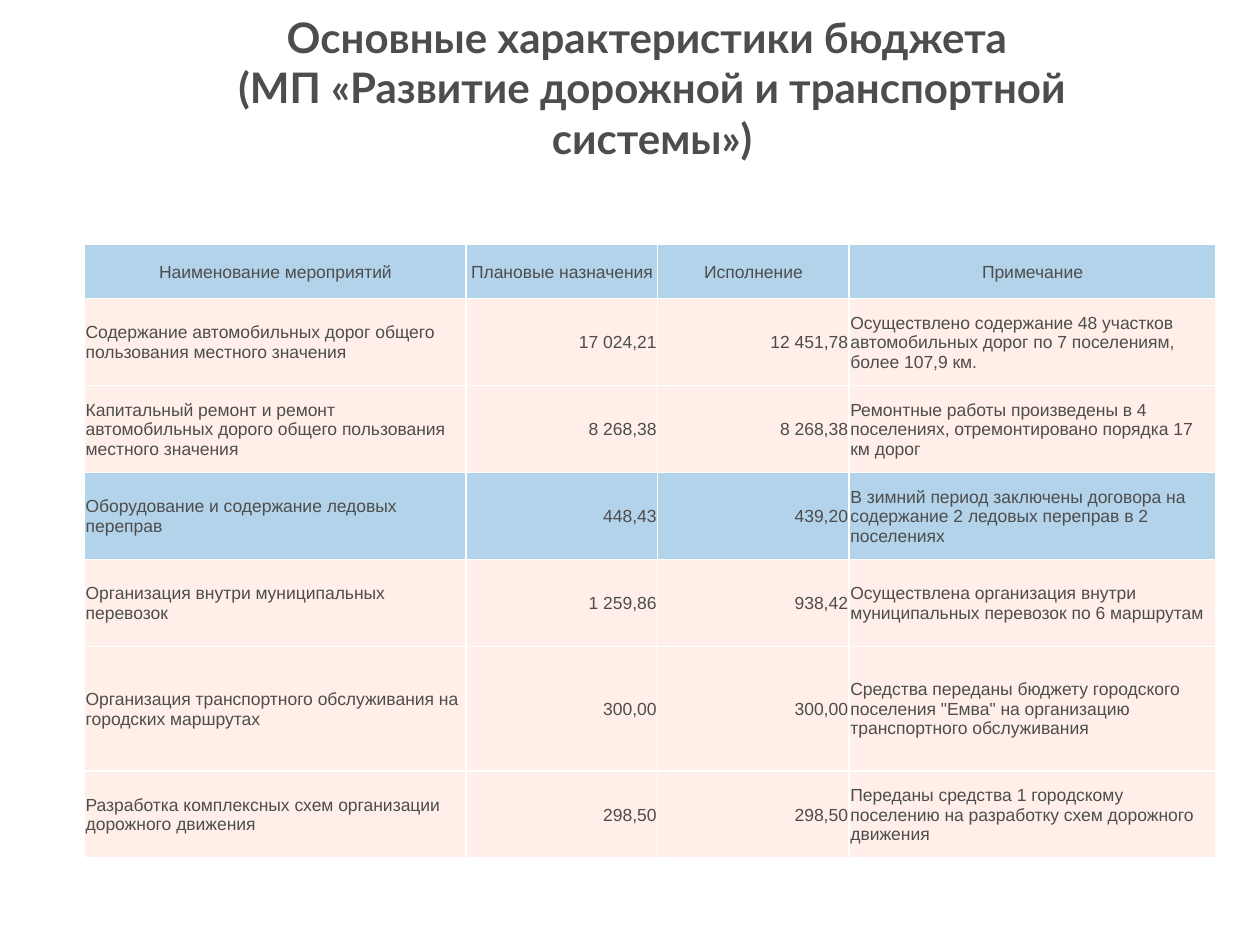
import pptx
import pptx.util
import pptx.dml.color
import pptx.enum.text
import pptx.oxml.ns
from lxml import etree

# Content
HEADING = "Основные характеристики бюджета \v(МП «Развитие дорожной и транспортной системы»)"
HEADER = ("Наименование мероприятий", "Плановые назначения", "Исполнение", "Примечание")
MEASURES = [
    ("Содержание автомобильных дорог общего пользования местного значения",
     "17 024,21", "12 451,78",
     "Осуществлено содержание 48 участков автомобильных дорог по 7 поселениям, более 107,9 км."),
    ("Капитальный ремонт и ремонт автомобильных дорого общего пользования местного значения",
     "8 268,38", "8 268,38",
     "Ремонтные работы произведены в 4 поселениях, отремонтировано порядка 17 км дорог"),
    ("Оборудование и содержание ледовых переправ",
     "448,43", "439,20",
     "В зимний период заключены договора на содержание 2 ледовых переправ в 2 поселениях"),
    ("Организация внутри муниципальных перевозок",
     "1 259,86", "938,42",
     "Осуществлена организация внутри муниципальных перевозок по 6 маршрутам"),
    ("Организация транспортного обслуживания на городских маршрутах",
     "300,00", "300,00",
     "Средства переданы бюджету городского поселения \"Емва\" на организацию транспортного обслуживания"),
    ("Разработка комплексных схем организации дорожного движения",
     "298,50", "298,50",
     "Переданы средства 1 городскому поселению на разработку схем дорожного движения"),
]

# Layout and look
COLORS = {"text": "4D4D4D", "blue": "B3D3EA", "peach": "FFEFE8", "border": "FFFFFF"}
COLUMNS = (3.03, 1.52, 1.52, 2.91)
HEADER_HEIGHT, ROW_HEIGHT, TALL_HEIGHT = 0.43, 0.69, 0.99
BLUE_ROWS, TALL_ROW = (0, 3), 5

ALIGN = pptx.enum.text.PP_ALIGN
MIDDLE = pptx.enum.text.MSO_ANCHOR.MIDDLE
BODY_ALIGN = (ALIGN.LEFT, ALIGN.RIGHT, ALIGN.RIGHT, ALIGN.LEFT)
inches = pptx.util.Inches


def color(name):
    return pptx.dml.color.RGBColor.from_string(COLORS[name])


def style(frame, font_name, size, align, bold=False):
    for paragraph in frame.paragraphs:
        paragraph.alignment = align
        for run in paragraph.runs:
            run.font.name = font_name
            run.font.size = pptx.util.Pt(size)
            run.font.bold = bold
            run.font.color.rgb = color("text")


def add_borders(cell):
    properties = cell._tc.get_or_add_tcPr()
    qn = pptx.oxml.ns.qn
    for index, side in enumerate(("lnL", "lnR", "lnT", "lnB")):
        line = etree.Element(qn(f"a:{side}"), w=str(pptx.util.Pt(1)))
        fill = etree.SubElement(line, qn("a:solidFill"))
        etree.SubElement(fill, qn("a:srgbClr"), val=COLORS["border"])
        properties.insert(index, line)


deck = pptx.Presentation()
deck.slide_width, deck.slide_height = inches(10), inches(7.5)
slide = deck.slides.add_slide(deck.slide_layouts[6])

# Heading
heading = slide.shapes.add_textbox(inches(1.3), inches(0.09), inches(7.75), inches(1.2)).text_frame
heading.word_wrap = True
heading.vertical_anchor = MIDDLE
heading.margin_top = heading.margin_bottom = 0
heading.text = HEADING
style(heading, "Lato", 24, ALIGN.CENTER, bold=True)

# Budget table
rows = [HEADER] + MEASURES
heights = [HEADER_HEIGHT] + [ROW_HEIGHT] * len(MEASURES)
heights[TALL_ROW] = TALL_HEIGHT
budget = slide.shapes.add_table(len(rows), len(COLUMNS), inches(0.67), inches(1.94),
                                inches(sum(COLUMNS)), inches(sum(heights))).table
budget.first_row = budget.horz_banding = False
for column, width in zip(budget.columns, COLUMNS):
    column.width = inches(width)

for r, (entries, height) in enumerate(zip(rows, heights)):
    budget.rows[r].height = inches(height)
    for c, entry in enumerate(entries):
        cell = budget.cell(r, c)
        cell.text = entry
        cell.vertical_anchor = MIDDLE
        cell.margin_left = cell.margin_right = cell.margin_top = inches(0.01)
        cell.margin_bottom = 0
        cell.fill.solid()
        cell.fill.fore_color.rgb = color("blue" if r in BLUE_ROWS else "peach")
        style(cell.text_frame, "Arial", 10, BODY_ALIGN[c] if r else ALIGN.CENTER)
        add_borders(cell)

deck.save("out.pptx")
